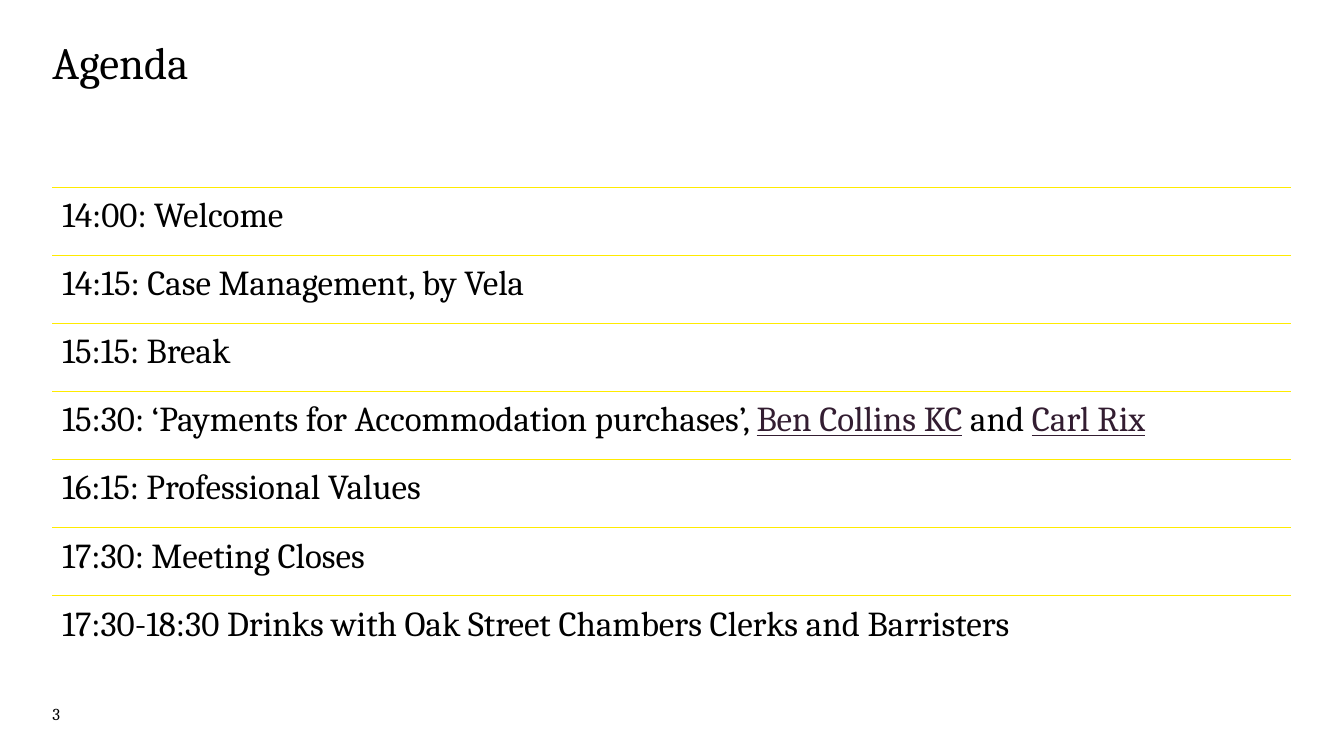
"""Build the agenda slide: a title and seven ruled rows."""
from lxml import etree
from pptx import Presentation
from pptx.dml.color import RGBColor
from pptx.enum.shapes import MSO_CONNECTOR as Connector
from pptx.enum.text import MSO_ANCHOR as Anchor, MSO_AUTO_SIZE as AutoSize, PP_ALIGN as Align
from pptx.oxml.ns import qn
from pptx.util import Inches, Pt

TITLE = "Agenda"
PAGE_NUMBER = "3"
SPEAKERS = ("Ben Collins KC", "Carl Rix")
AGENDA = [
    ["14:00: Welcome"],
    ["14:15: Case Management, by Vela"],
    ["15:15: Break"],
    ["15:30: ‘Payments for Accommodation purchases’, ", SPEAKERS[0], " and ", SPEAKERS[1]],
    ["16:15: Professional Values"],
    ["17:30: Meeting Closes"],
    ["17:30-18:30 Drinks with Oak Street Chambers Clerks and Barristers"],
]

FONT = "Cambria"
BLACK, PLUM, YELLOW = "000000", "331D31", "FFEB00"
LEFT, WIDTH = 0.52, 12.28
FIRST_ROW, ROW_HEIGHT = 1.86, 0.675


def colour(hex_code):
    return RGBColor.from_string(hex_code)


def write(holder, parts, size, inset=0, spacing=0.9):
    frame = holder.text_frame
    frame.word_wrap = True
    frame.auto_size = AutoSize.NONE
    frame.vertical_anchor = Anchor.TOP
    frame.margin_left = frame.margin_right = Inches(inset)
    frame.margin_top = frame.margin_bottom = Inches(inset)
    paragraph = frame.paragraphs[0]
    paragraph.alignment = Align.LEFT
    paragraph.line_spacing = spacing
    for part in parts:
        run = paragraph.add_run()
        run.text = part
        run.font.name = FONT
        run.font.size = Pt(size)
        run.font.color.rgb = colour(PLUM if part in SPEAKERS else BLACK)
        if part in SPEAKERS:
            run.font.underline = True


def add_rule(slide, top):
    rule = slide.shapes.add_connector(
        Connector.STRAIGHT, Inches(LEFT), Inches(top), Inches(LEFT + WIDTH), Inches(top))
    rule.line.color.rgb = colour(YELLOW)
    rule.line.width = Pt(1)
    etree.SubElement(rule._element.spPr, qn("a:effectLst"))


def main():
    deck = Presentation()
    deck.slide_width, deck.slide_height = Inches(13.33), Inches(7.5)
    slide = deck.slides.add_slide(deck.slide_layouts[5])

    title = slide.shapes.title
    title.left, title.top = Inches(LEFT), Inches(0.4)
    title.width, title.height = Inches(WIDTH), Inches(1.17)
    write(title, [TITLE], 32)

    page_number = slide.shapes.add_textbox(
        Inches(LEFT), Inches(6.98), Inches(0.47), Inches(0.4))
    write(page_number, [PAGE_NUMBER], 12, spacing=1.0)

    for index, parts in enumerate(AGENDA):
        top = FIRST_ROW + index * ROW_HEIGHT
        add_rule(slide, top)
        row = slide.shapes.add_textbox(
            Inches(LEFT), Inches(top), Inches(WIDTH), Inches(ROW_HEIGHT))
        write(row, parts, 25, inset=0.1)

    deck.save("out.pptx")


if __name__ == "__main__":
    main()
